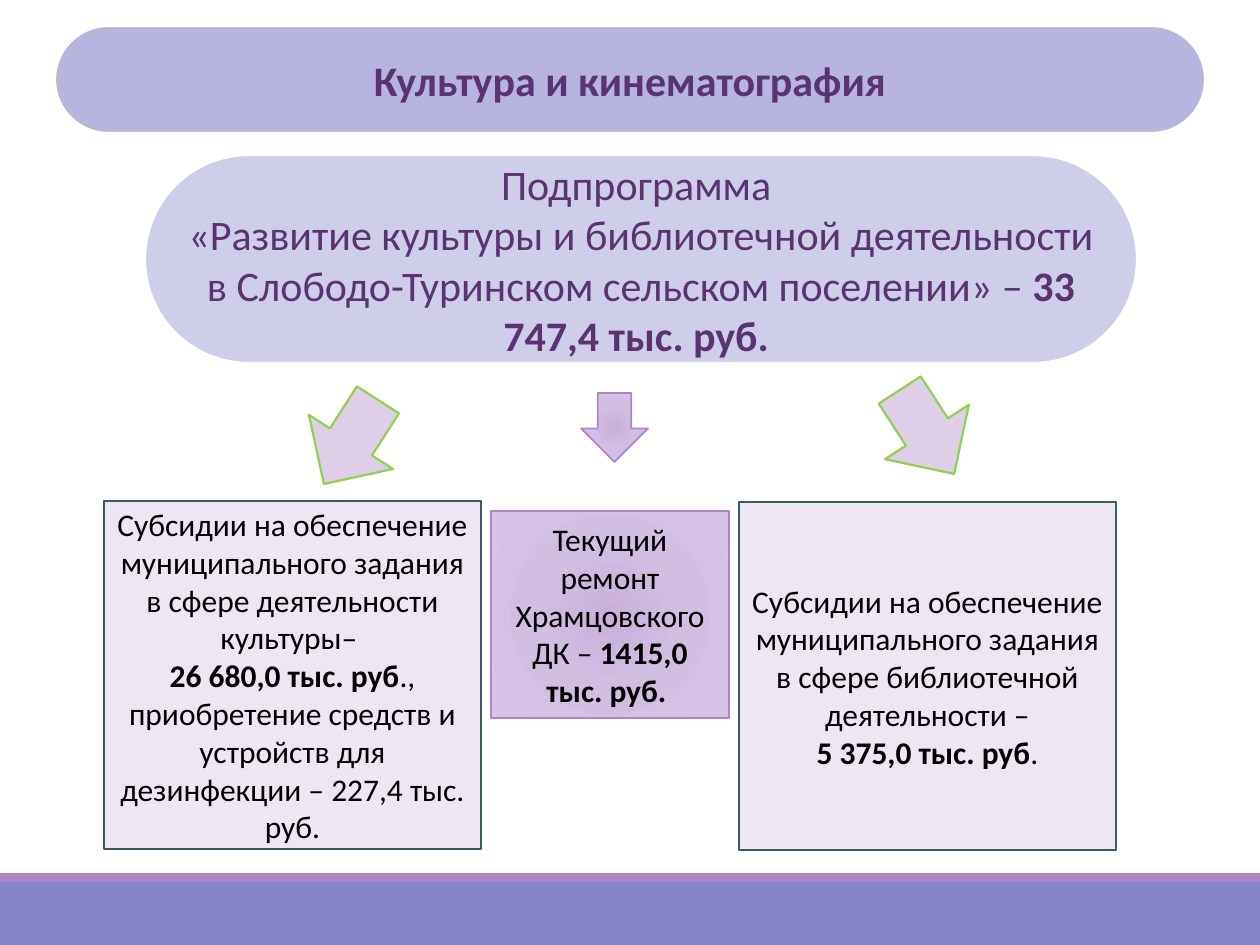
from lxml.etree import SubElement
from pptx import Presentation
from pptx.dml.color import RGBColor
from pptx.enum.shapes import MSO_SHAPE
from pptx.enum.text import MSO_ANCHOR, PP_ALIGN
from pptx.oxml import parse_xml
from pptx.oxml.ns import nsdecls, qn
from pptx.util import Pt

PX = 914400 / 126
WIDTH, HEIGHT = 1260, 945
GLOW = "glow"
GLOW_STOPS = {0: "C8B0D9", 45: "D2BEE1", 100: "D8C3E7"}
PROGRAMME_FORMAT = {"name": "Calibri", "size": Pt(24)}
DETAIL_FORMAT = {"name": "Calibri", "size": Pt(18)}

TITLE = [[("Культура и кинематография", True)]]
PROGRAMME = [
    [("Подпрограмма ", False)],
    [("«Развитие культуры и библиотечной деятельности "
      "в Слободо-Туринском сельском поселении» – ", False),
     ("33 747,4 тыс. руб. ", True)],
]
CULTURE = [
    [("Субсидии на обеспечение муниципального задания "
      "в сфере деятельности культуры– ", False)],
    [("26 680,0 тыс. руб", True),
     ("., приобретение средств и устройств для дезинфекции "
      "– 227,4 тыс. руб.", False)],
]
REPAIR = [[("Текущий ремонт Храмцовского ДК – ", False),
           ("1415,0 тыс. руб. ", True)]]
LIBRARY = [
    [("Субсидии на обеспечение муниципального задания "
      "в сфере библиотечной деятельности –", False)],
    [("5 375,0 тыс. руб", True), (".", False)],
]


def emu(px):
    return round(px * PX)


def paint(color_format, color):
    color_format.rgb = RGBColor.from_string(color)


def fill_glow(shape):
    gradient = parse_xml(f"<a:gradFill {nsdecls('a')} rotWithShape='1'/>")
    stops = SubElement(gradient, qn("a:gsLst"))
    for position, color in GLOW_STOPS.items():
        stop = SubElement(stops, qn("a:gs"), pos=str(position * 1000))
        SubElement(stop, qn("a:srgbClr"), val=color)
    circle = SubElement(gradient, qn("a:path"))
    circle.set(qn("a:path").split("}")[1], "circle")
    SubElement(circle, qn("a:fillToRect"),
               dict.fromkeys("ltrb", "100000"))
    shape._element.spPr.find(qn("a:prstGeom")).addnext(gradient)


def add_figure(slide, kind, box, fill, line=None, line_width=1.25):
    figure = slide.shapes.add_shape(kind, *map(emu, box))
    figure.shadow.inherit = False
    if fill == GLOW:
        fill_glow(figure)
    else:
        figure.fill.solid()
        paint(figure.fill.fore_color, fill)
    if line:
        paint(figure.line.color, line)
        figure.line.width = Pt(line_width)
    else:
        figure.line.fill.background()
    return figure


def write(figure, paragraphs, font_format, color):
    frame = figure.text_frame
    frame.word_wrap = True
    frame.vertical_anchor = MSO_ANCHOR.MIDDLE
    for index, runs in enumerate(paragraphs):
        paragraph = frame.add_paragraph() if index else frame.paragraphs[0]
        paragraph.alignment = PP_ALIGN.CENTER
        for words, bold in runs:
            run = paragraph.add_run()
            run.text = words
            for attribute, value in {**font_format, "bold": bold}.items():
                setattr(run.font, attribute, value)
            paint(run.font.color, color)


def add_footer(slide, left, top, width, height):
    stripe = 9
    add_figure(slide, MSO_SHAPE.RECTANGLE,
               (left, top + stripe, width, height - stripe), "8784C7")
    add_figure(slide, MSO_SHAPE.RECTANGLE, (left, top, width, stripe), "AD84C6")


def add_heading(slide, left, top, width, height):
    title_height, programme_top, programme_inset = 107, 129, 90
    bands = [
        (TITLE, (left, top, width, title_height), "B7B5DD"),
        (PROGRAMME, (left + programme_inset, top + programme_top, 992,
                     height - programme_top), "CFCEE9"),
    ]
    for paragraphs, box, fill in bands:
        pill = add_figure(slide, MSO_SHAPE.ROUNDED_RECTANGLE, box, fill, "FFFFFF")
        pill.adjustments[0] = 0.5
        write(pill, paragraphs, PROGRAMME_FORMAT, "5A3471")


def add_arrows(slide, left, top):
    side = 100
    for x, y, rotation in [(0, 10, 32.7), (576, 0, 327)]:
        arrow = add_figure(slide, MSO_SHAPE.DOWN_ARROW,
                           (left + x, top + y, side, side), "DECEE8", "92D050")
        arrow.rotation = rotation
    add_figure(slide, MSO_SHAPE.DOWN_ARROW, (left + 280, top + 11, 67, 69),
               GLOW, "AD84C6", 1)


def add_expenses(slide, left, top):
    subsidy = (377, 348)
    expenses = [
        (CULTURE, (0, 0), subsidy, "EFE6F4", "3A5B63", 1.25),
        (LIBRARY, (635, 1), subsidy, "EFE6F4", "3A5B63", 1.25),
        (REPAIR, (387, 10), (238, 207), GLOW, "AD84C6", 1),
    ]
    for paragraphs, (x, y), size, fill, line, line_width in expenses:
        card = add_figure(slide, MSO_SHAPE.RECTANGLE,
                          (left + x, top + y, *size), fill, line, line_width)
        write(card, paragraphs, DETAIL_FORMAT, "000000")


def main():
    presentation = Presentation()
    presentation.slide_width = emu(WIDTH)
    presentation.slide_height = emu(HEIGHT)
    slide = presentation.slides.add_slide(presentation.slide_layouts[6])
    add_footer(slide, 0, 873, WIDTH, 72)
    add_heading(slide, 55, 26, 1150, 337)
    add_arrows(slide, 301, 382)
    add_expenses(slide, 104, 501)
    presentation.save("out.pptx")


if __name__ == "__main__":
    main()
